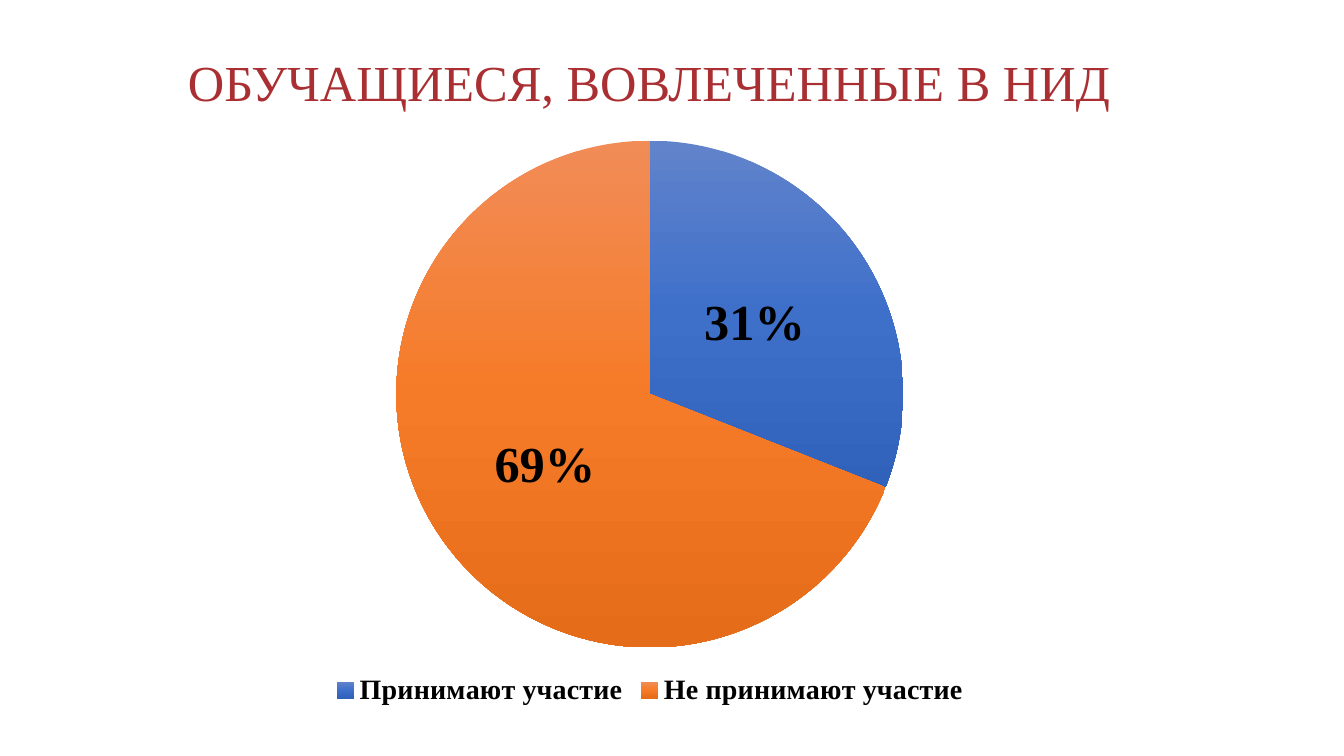
from copy import deepcopy

from lxml import etree
from pptx import Presentation
from pptx.chart.data import CategoryChartData
from pptx.dml.color import RGBColor
from pptx.enum.chart import XL_CHART_TYPE, XL_LABEL_POSITION, XL_LEGEND_POSITION
from pptx.enum.text import MSO_ANCHOR, PP_ALIGN
from pptx.oxml.ns import qn
from pptx.util import Inches, Pt

FONT = "Times New Roman"
SLICES = {
    "Принимают участие": (0.31, ["6183CB", "3E70CA", "3062BB"]),
    "Не принимают участие": (0.69, ["F18C57", "F67B28", "E56C19"]),
}


def color(value):
    return RGBColor.from_string(value)


def format_font(font, size, fill="000000", bold=False):
    font.name, font.size, font.bold = FONT, Pt(size), bold
    font.color.rgb = color(fill)


presentation = Presentation()
presentation.slide_width, presentation.slide_height = Inches(13.33), Inches(7.5)
slide = presentation.slides.add_slide(presentation.slide_layouts[5])

# Title
title = slide.shapes.title
title.left, title.top = Inches(0.78), Inches(0.12)
title.width, title.height = Inches(11.32), Inches(1.45)
title.text_frame.vertical_anchor = MSO_ANCHOR.MIDDLE
paragraph = title.text_frame.paragraphs[0]
paragraph.alignment = PP_ALIGN.CENTER
paragraph.line_spacing = 0.9
run = paragraph.add_run()
run.text = "ОБУЧАЩИЕСЯ, ВОВЛЕЧЕННЫЕ В НИД"
format_font(run.font, 36, "AA2F32")

# Pie chart
data = CategoryChartData(number_format="0%")
data.categories = list(SLICES)
data.add_series("Series 1", [share for share, _ in SLICES.values()])
chart = slide.shapes.add_chart(
    XL_CHART_TYPE.PIE, Inches(1.75), Inches(1.28), Inches(9.39), Inches(5.78), data
).chart
chart.has_title = False
format_font(chart.font, 10)
plot = chart.plots[0]
plot.vary_by_categories = True

# Slices, each with a three-stop vertical gradient
for index, (_, shades) in enumerate(SLICES.values()):
    point_format = plot.series[0].points[index].format
    point_format.line.fill.background()
    fill = point_format.fill
    fill.gradient()
    fill.gradient_angle = 270
    stop_list = list(chart.element.iter(qn("a:gsLst")))[index]
    stop_list.append(deepcopy(stop_list[0]))
    for stop, position, shade in zip(fill.gradient_stops, (0, 0.5, 1), shades):
        stop.position = position
        stop.color.rgb = color(shade)

# Labels
plot.has_data_labels = True
labels = plot.data_labels
labels.show_value, labels.show_percentage = True, False
labels.number_format, labels.number_format_is_linked = "0%", False
labels.position = XL_LABEL_POSITION.CENTER
format_font(labels.font, 36, bold=True)

# Legend
chart.has_legend = True
chart.legend.position = XL_LEGEND_POSITION.BOTTOM
chart.legend.include_in_layout = False
format_font(chart.legend.font, 20, bold=True)

# Pie placement as shares of the chart area
plot_area = chart.element.find(".//" + qn("c:plotArea"))
layout = plot_area.find(qn("c:layout"))
if layout is None:
    layout = etree.Element(qn("c:layout"))
    plot_area.insert(0, layout)
manual = etree.SubElement(layout, qn("c:manualLayout"))
placement = {"layoutTarget": "inner", "xMode": "edge", "yMode": "edge",
             "x": 0.23, "y": 0.02, "w": 0.54, "h": 0.87}
for name, value in placement.items():
    etree.SubElement(manual, qn("c:" + name)).set("val", str(value))

presentation.save("out.pptx")
